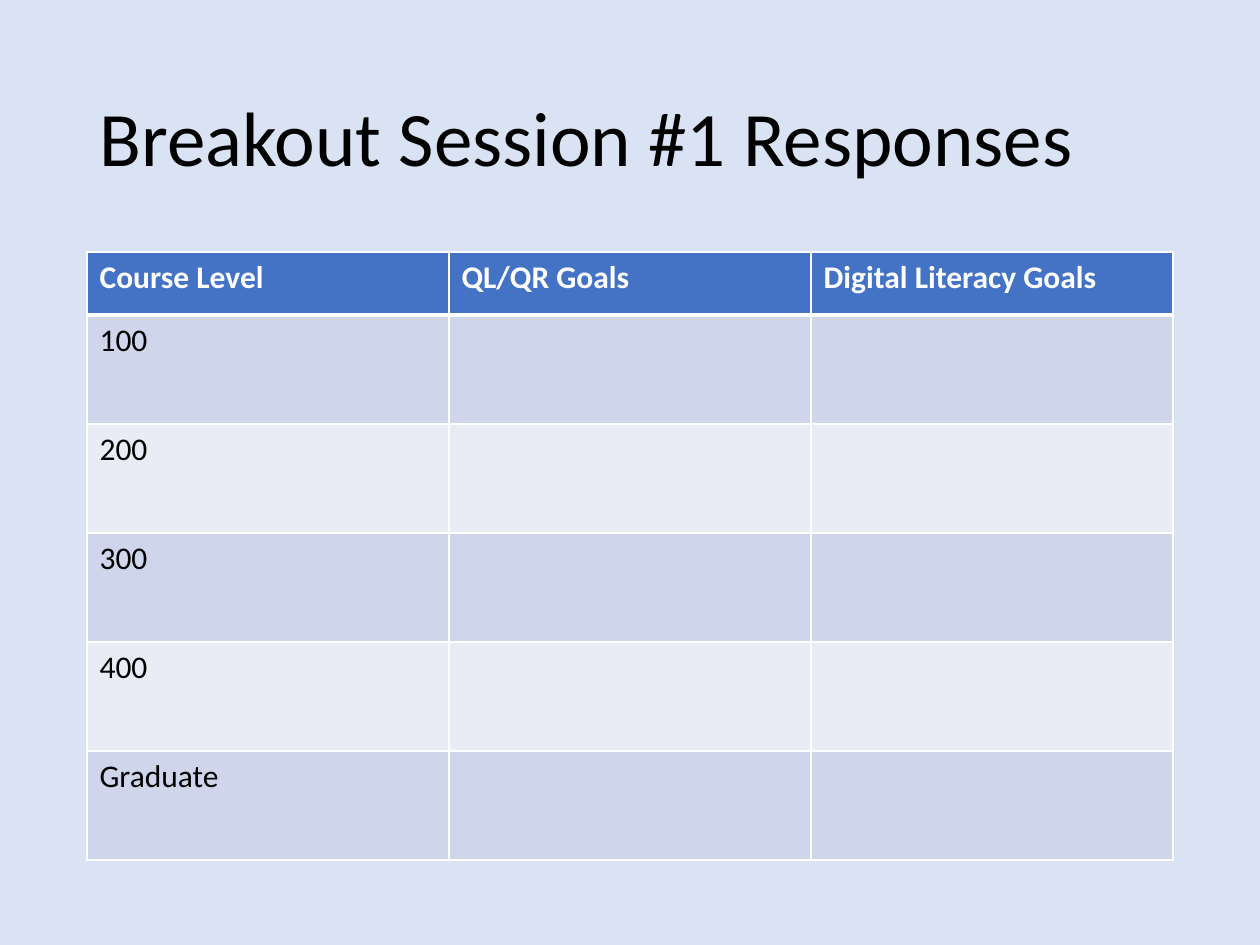
from lxml import etree
from pptx import Presentation
from pptx import util as u
from pptx.dml.color import RGBColor
from pptx.enum import text
from pptx.oxml import ns

PX = 914400 / 126


def px(length):
    return u.Emu(round(length * PX))


def paint(fill, color):
    fill.solid()
    fill.fore_color.rgb = RGBColor.from_string(color)


deck = Presentation()
deck.slide_width, deck.slide_height = px(1260), px(945)
page = deck.slides.add_slide(deck.slide_layouts[6])
paint(page.background.fill, "DAE3F3")

# Title
box = page.shapes.add_textbox(px(87), px(50), px(1086), px(183))
frame = box.text_frame
frame.word_wrap = True
frame.vertical_anchor = text.MSO_ANCHOR.MIDDLE
para = frame.paragraphs[0]
para.line_spacing = 0.9
span = para.add_run()
span.text = "Breakout Session #1 Responses"
for name, value in {"name": "Calibri", "size": u.Pt(44)}.items():
    setattr(span.font, name, value)
paint(span.font.fill, "000000")

# Response table: one header row, then one row per course level
headers = ["Course Level", "QL/QR Goals", "Digital Literacy Goals"]
levels = ["100", "200", "300", "400", "Graduate"]
rows = [headers] + [[level, "", ""] for level in levels]
column_width, header_height, row_height = 362, 63, 109
table = page.shapes.add_table(
    len(rows), len(headers), px(87), px(252),
    px(column_width * len(headers)),
    px(header_height + row_height * len(levels)),
).table
for column in table.columns:
    column.width = px(column_width)

for r, row in enumerate(rows):
    is_header = r == 0
    table.rows[r].height = px(header_height if is_header else row_height)
    fill_color = "4472C4" if is_header else ("E9EBF5", "CFD5EA")[r % 2]
    # The line between the header and the first level is heavier
    borders = {"lnL": 1, "lnR": 1, "lnT": 3 if r == 1 else 1, "lnB": 3 if is_header else 1}
    for c, words in enumerate(row):
        cell = table.cell(r, c)
        cell.text = words
        font = cell.text_frame.paragraphs[0].font
        for name, value in {"name": "Calibri", "size": u.Pt(18), "bold": is_header}.items():
            setattr(font, name, value)
        for span in cell.text_frame.paragraphs[0].runs:
            for name, value in {"name": "Calibri", "size": u.Pt(18), "bold": is_header}.items():
                setattr(span.font, name, value)
            paint(span.font.fill, "FFFFFF" if is_header else "000000")
        props = cell._tc.get_or_add_tcPr()
        for side, points in borders.items():
            line = etree.SubElement(props, ns.qn(f"a:{side}"), w=str(u.Pt(points)))
            solid = etree.SubElement(line, ns.qn("a:solidFill"))
            etree.SubElement(solid, ns.qn("a:srgbClr"), val="FFFFFF")
        paint(cell.fill, fill_color)

deck.save("out.pptx")
